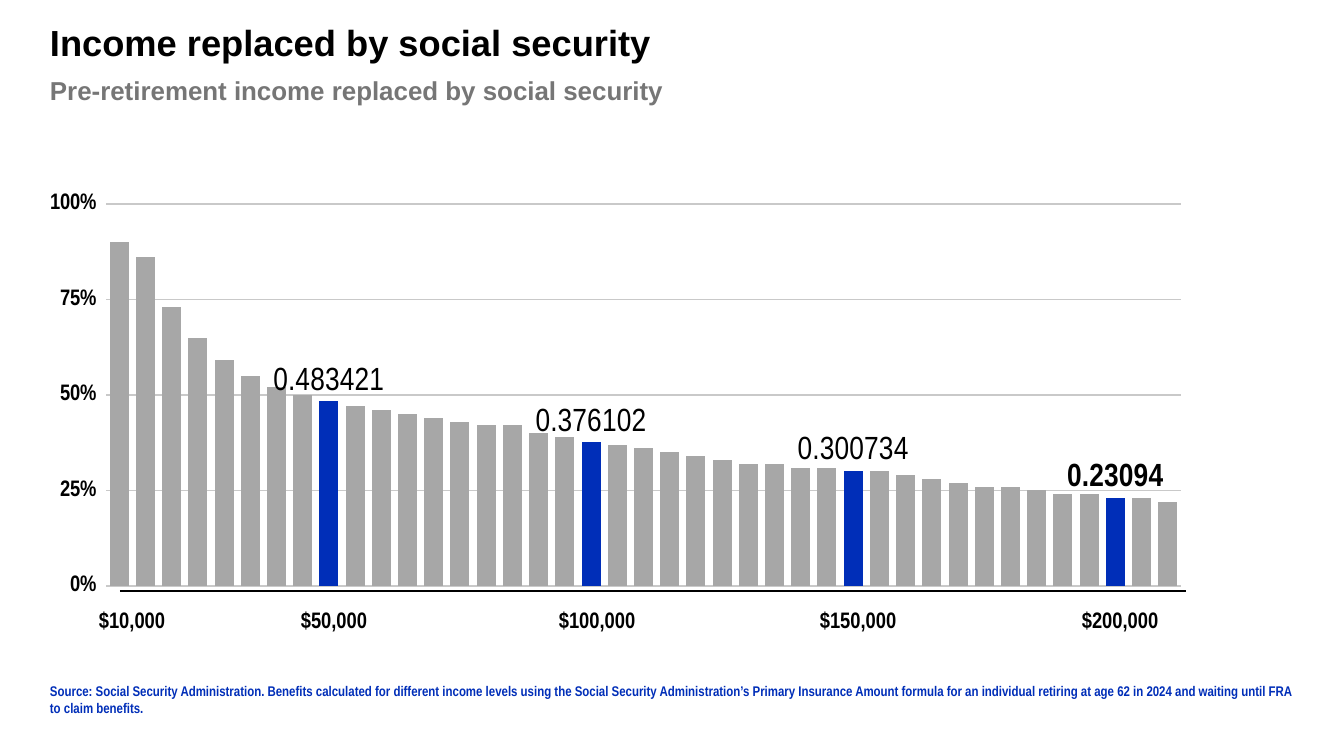
from lxml import etree
from pptx import Presentation
from pptx.chart.data import CategoryChartData
from pptx.dml.color import RGBColor
from pptx.enum.chart import XL_CHART_TYPE, XL_LABEL_POSITION, XL_TICK_MARK
from pptx.enum.shapes import MSO_CONNECTOR
from pptx.enum.text import MSO_ANCHOR
from pptx.oxml import parse_xml
from pptx.oxml.ns import nsdecls, qn
from pptx.util import Emu, Pt

COLUMN_CLUSTERED = XL_CHART_TYPE.COLUMN_CLUSTERED
OUTSIDE_END = XL_LABEL_POSITION.OUTSIDE_END
TICK_OUTSIDE = XL_TICK_MARK.OUTSIDE
STRAIGHT = MSO_CONNECTOR.STRAIGHT
TOP, BOTTOM = MSO_ANCHOR.TOP, MSO_ANCHOR.BOTTOM

BLACK = RGBColor(0x00, 0x00, 0x00)
BLUE = RGBColor(0x00, 0x2E, 0xB8)
BAR_GRAY = RGBColor(0xA7, 0xA7, 0xA7)
GRID_GRAY = RGBColor(0xC9, 0xC9, 0xC9)
SUBTITLE_GRAY = RGBColor(0x76, 0x76, 0x76)
SANS, NARROW = "Arial", "Arial Narrow"

# Content: (text, font, points, colour, space after in points)
HEADINGS = [
    ("Income replaced by social security", SANS, 25.9, BLACK, 8),
    ("Pre-retirement income replaced by social security", SANS, 18.5, SUBTITLE_GRAY, 8),
]
SOURCE = [(
    "Source: Social Security Administration. Benefits calculated for different income "
    "levels using the Social Security Administration’s Primary Insurance Amount formula "
    "for an individual retiring at age 62 in 2024 and waiting until FRA to claim benefits.",
    NARROW, 10, BLUE, 1.5,
)]
REPLACEMENT_RATES = [
    0.9, 0.86, 0.73, 0.65, 0.59, 0.55, 0.52, 0.5, 0.483421, 0.47,
    0.46, 0.45, 0.44, 0.43, 0.42, 0.42, 0.4, 0.39, 0.376102, 0.37,
    0.36, 0.35, 0.34, 0.33, 0.32, 0.32, 0.31, 0.31, 0.300734, 0.3,
    0.29, 0.28, 0.27, 0.26, 0.26, 0.25, 0.24, 0.24, 0.23094, 0.23, 0.22,
]
HIGHLIGHTED_BARS = {8: False, 18: False, 28: False, 38: True}  # index: bold label
INCOME_LABELS = [("$10,000", 89), ("$50,000", 291), ("$100,000", 549),
                 ("$150,000", 810), ("$200,000", 1072)]

# Geometry in px: left, top, width, height
SLIDE_WIDTH, SLIDE_HEIGHT = 1344, 756
HEADING_BOX = (50, 20, 958, 86)
SOURCE_BOX = (50, 682, 1243, 34)
CHART_BOX = (50, 194, 1137, 411)
PLOT_BOX = (104, 203, 1077, 383)
INCOME_TOP, INCOME_WIDTH, INCOME_HEIGHT = 601, 100, 26
AXIS_LINE = (120, 591, 1186, 591)


def px(length):
    return Emu(round(length * 914400 / 100.8))


def add_text(slide, box, lines, anchor=TOP, inset=None):
    frame = slide.shapes.add_textbox(*map(px, box)).text_frame
    frame.word_wrap = True
    frame.vertical_anchor = anchor
    if inset is not None:
        frame.margin_left = frame.margin_right = px(inset)
        frame.margin_top = frame.margin_bottom = px(inset)
    for index, (text, font_name, size, color, space_after) in enumerate(lines):
        paragraph = frame.add_paragraph() if index else frame.paragraphs[0]
        paragraph.text = text
        paragraph.space_after = Pt(space_after)
        set_font(paragraph.font, font_name, size, color, True)


def set_font(font, name, size, color, bold):
    font.name, font.size, font.bold = name, Pt(size), bold
    font.color.rgb = color


def set_plot_area(chart):
    """Fix the inner plot area as fractions of the chart frame."""
    left, top, width, height = CHART_BOX
    plot_left, plot_top, plot_width, plot_height = PLOT_BOX
    fractions = {"x": (plot_left - left) / width, "y": (plot_top - top) / height,
                 "w": plot_width / width, "h": plot_height / height}
    modes = "".join(f'<c:{key}Mode val="edge"/>' for key in "xy")
    sizes = "".join(f'<c:{key} val="{value:.4f}"/>' for key, value in fractions.items())
    layout = parse_xml(
        f'<c:layout {nsdecls("c")}><c:manualLayout><c:layoutTarget val="inner"/>'
        f"{modes}{sizes}</c:manualLayout></c:layout>")
    plot_area = chart.plots[0]._element.getparent()
    for old_layout in plot_area.findall(qn("c:layout")):
        plot_area.remove(old_layout)
    plot_area.insert(0, layout)


def add_rate_chart(slide):
    data = CategoryChartData()
    data.categories = [str(number + 1) for number in range(len(REPLACEMENT_RATES))]
    data.add_series("Series 1", REPLACEMENT_RATES)
    chart = slide.shapes.add_chart(COLUMN_CLUSTERED, *map(px, CHART_BOX), data).chart
    chart.has_legend = chart.has_title = False
    set_font(chart.font, NARROW, 13, BLACK, False)
    set_plot_area(chart)

    chart.category_axis.visible = False
    axis = chart.value_axis
    axis.minimum_scale, axis.maximum_scale, axis.major_unit = 0, 1, 0.25
    axis.major_tick_mark = TICK_OUTSIDE
    axis.format.line.fill.background()
    axis.major_gridlines.format.line.color.rgb = GRID_GRAY
    axis.major_gridlines.format.line.width = Pt(1)
    axis.tick_labels.number_format = "0%"
    axis.tick_labels.number_format_is_linked = False
    set_font(axis.tick_labels.font, NARROW, 16, BLACK, True)

    plot = chart.plots[0]
    plot.gap_width, plot.overlap, plot.vary_by_categories = 38, -2, False
    series = plot.series[0]
    series.format.fill.solid()
    series.format.fill.fore_color.rgb = BAR_GRAY
    series.data_labels.show_value = False
    for index, bold in HIGHLIGHTED_BARS.items():
        point = series.points[index]
        point.format.fill.solid()
        point.format.fill.fore_color.rgb = BLUE
        set_font(point.data_label.font, NARROW, 23, BLACK, bold)
        point.data_label.position = OUTSIDE_END


def add_axis_line(slide):
    line = slide.shapes.add_connector(STRAIGHT, *map(px, AXIS_LINE))
    line.line.color.rgb = BLACK
    line.line.width = Pt(0.75)
    etree.SubElement(line._element.spPr, qn("a:effectLst"))


def main():
    presentation = Presentation()
    presentation.slide_width, presentation.slide_height = px(SLIDE_WIDTH), px(SLIDE_HEIGHT)
    slide = presentation.slides.add_slide(presentation.slide_layouts[6])
    add_text(slide, SOURCE_BOX, SOURCE, BOTTOM, inset=0)
    add_text(slide, HEADING_BOX, HEADINGS, inset=0)
    add_rate_chart(slide)
    for label, left in INCOME_LABELS:
        add_text(slide, (left, INCOME_TOP, INCOME_WIDTH, INCOME_HEIGHT),
                 [(label, NARROW, 16, BLACK, 0)])
    add_axis_line(slide)
    presentation.save("out.pptx")


if __name__ == "__main__":
    main()
